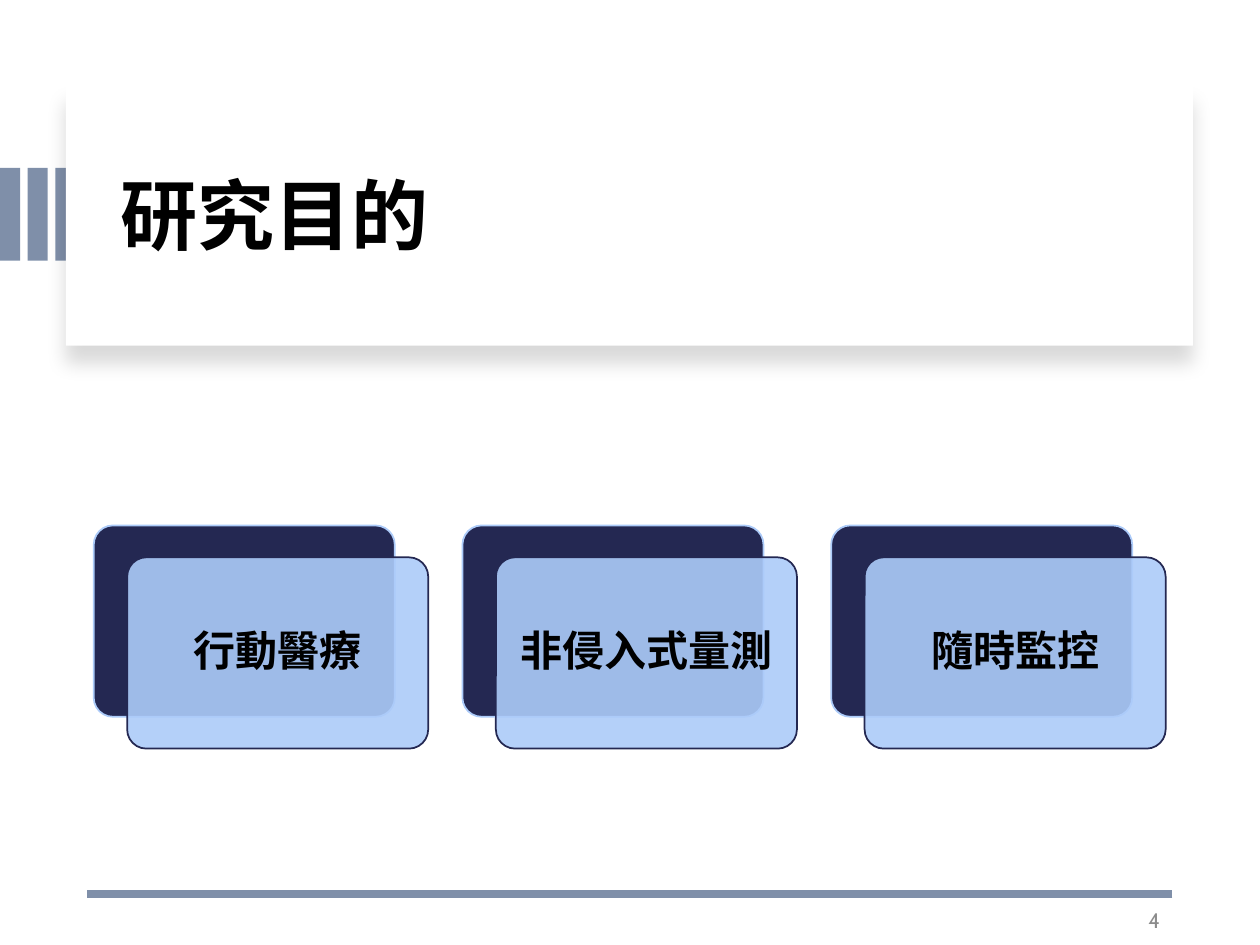
from lxml.etree import SubElement
from pptx import Presentation
from pptx.dml.color import RGBColor
from pptx.enum.shapes import MSO_CONNECTOR, MSO_SHAPE
from pptx.enum.text import MSO_ANCHOR, PP_ALIGN
from pptx.oxml.ns import qn
from pptx.util import Pt

NAVY, SKY, SLATE = "242852", "ACCBF9", "7F8FA9"
GOALS = ["行動醫療", "非侵入式量測", "隨時監控"]


def color(hex_code):
    return RGBColor.from_string(hex_code)


def write_text(frame, text, size, font="Cabin", ink="000000", bold=False,
               align=PP_ALIGN.LEFT, spacing=1.0, after=0):
    frame.word_wrap = True
    frame.vertical_anchor = MSO_ANCHOR.MIDDLE
    paragraph = frame.paragraphs[0]
    paragraph.alignment = align
    paragraph.line_spacing = spacing
    paragraph.space_after = Pt(after)
    run = paragraph.add_run()
    run.text = text
    run.font.name = font
    run.font.size = Pt(size)
    run.font.bold = bold
    run.font.color.rgb = color(ink)


class SlideBuilder:
    """Hold the deck style and the current slide, and draw each kind of element."""

    def __init__(self, deck):
        self.slide = deck.slides.add_slide(deck.slide_layouts[6])
        self.shapes = self.slide.shapes
        self.accent = SLATE
        self.corner = 0.1
        self.border = 1

    def box(self, left, top, width, height, fill, kind=MSO_SHAPE.RECTANGLE):
        box = self.shapes.add_shape(kind, Pt(left), Pt(top), Pt(width), Pt(height))
        box.shadow.inherit = False
        box.fill.solid()
        box.fill.fore_color.rgb = color(fill)
        box.line.fill.background()
        return box

    def raised_panel(self, left, top, width, height):
        panel = self.box(left, top, width, height, "FFFFFF")
        effects = panel._element.spPr.find(qn("a:effectLst"))
        shadow = SubElement(effects, qn("a:outerShdw"), blurRad=str(Pt(11)),
                            dist=str(Pt(10)), dir="5400000", algn="t", rotWithShape="0")
        tint = SubElement(shadow, qn("a:srgbClr"), val="000000")
        SubElement(tint, qn("a:alpha"), val="15000")

    def card(self, left, top, width, height, fill, outline, opacity=100):
        card = self.box(left, top, width, height, fill, MSO_SHAPE.ROUNDED_RECTANGLE)
        card.adjustments[0] = self.corner
        card.line.color.rgb = color(outline)
        card.line.width = Pt(self.border)
        if opacity < 100:
            tint = card._element.spPr.find(qn("a:solidFill"))[0]
            SubElement(tint, qn("a:alpha"), val=str(opacity * 1000))
        return card

    def text(self, left, top, width, height, text, **text_format):
        area = self.shapes.add_textbox(Pt(left), Pt(top), Pt(width), Pt(height))
        write_text(area.text_frame, text, **text_format)

    def rule(self, start, end, y, weight):
        rule = self.shapes.add_connector(
            MSO_CONNECTOR.STRAIGHT, Pt(start), Pt(y), Pt(end), Pt(y))
        rule.line.color.rgb = color(self.accent)
        rule.line.width = Pt(weight)
        SubElement(rule._element.spPr, qn("a:effectLst"))


def main():
    deck = Presentation()
    deck.slide_width, deck.slide_height = Pt(720), Pt(540)
    builder = SlideBuilder(deck)

    for stripe in range(3):
        builder.box(stripe * 15.8, 96, 11.5, 53, builder.accent)
    builder.raised_panel(37.7, 48.5, 644, 149)
    builder.text(62, 64, 600, 122.5, "研究目的", size=44, font="Calibri",
                 bold=True, spacing=0.9)
    builder.rule(670, 50, 510.7, weight=4.5)
    builder.text(508, 511, 162, 29, "4", size=12, ink="8C8C8C",
                 align=PP_ALIGN.RIGHT, after=6)

    card_width, card_height = 172, 109.3
    for index, goal in enumerate(GOALS):
        left, top = 53.6 + index * 210.7, 300.3
        builder.card(left, top, card_width, card_height, NAVY, SKY)
        front = builder.card(left + 19.1, top + 18.2, card_width, card_height,
                             SKY, NAVY, opacity=90)
        write_text(front.text_frame, goal, size=24, bold=True,
                   align=PP_ALIGN.CENTER, spacing=0.9)

    deck.save("out.pptx")


if __name__ == "__main__":
    main()
